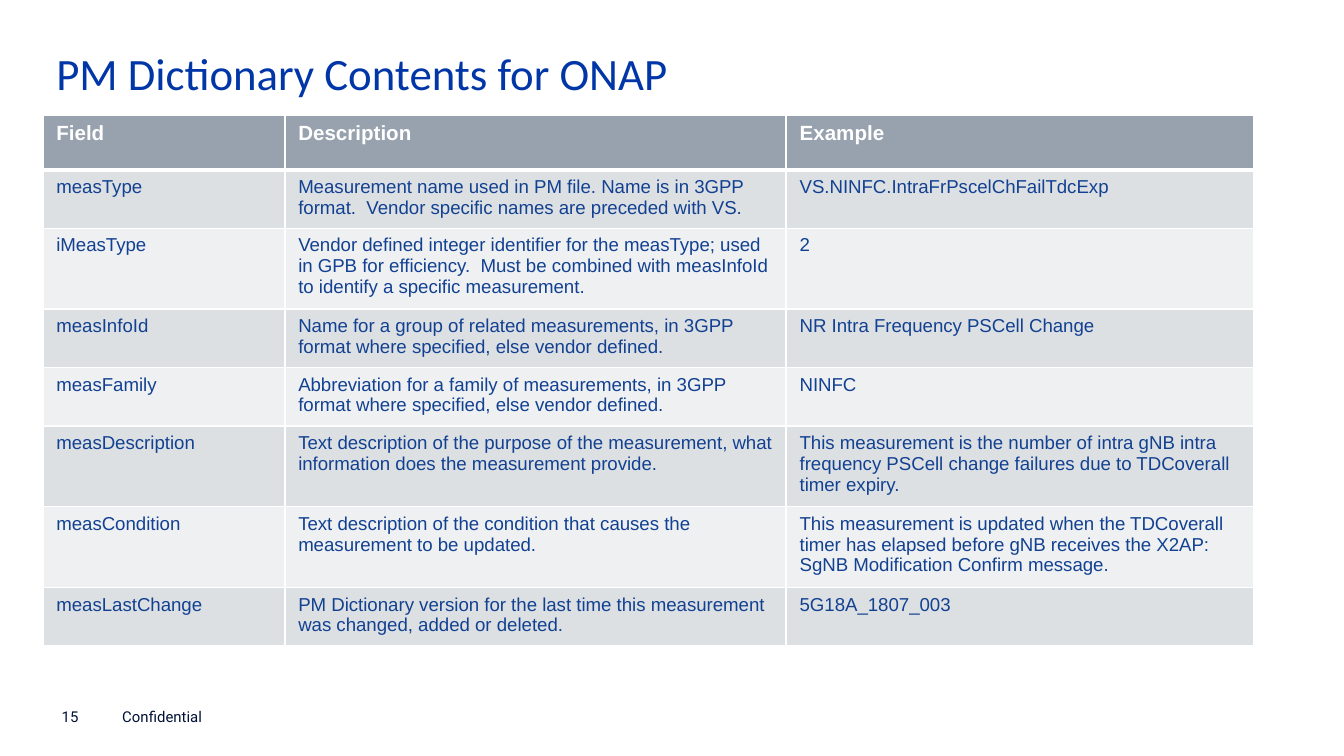
from dataclasses import dataclass

import pptx
import pptx.dml.color
import pptx.enum.text
import pptx.oxml
import pptx.oxml.ns
import pptx.util

Pt = pptx.util.Pt
Anchor = pptx.enum.text.MSO_ANCHOR


@dataclass(frozen=True)
class Font:
    name: str
    size: float
    color: str
    bold: bool = False


@dataclass(frozen=True)
class Theme:
    title: Font = Font("Calibri", 24, "0036A7")
    head: Font = Font("Arial", 11, "FFFFFF", True)
    cell: Font = Font("Arial", 10, "124191")
    foot: Font = Font("Roboto", 8, "001135")
    head_fill: str = "98A2AE"
    bands: tuple = ("DDE0E3", "EFF0F2")
    rule: str = "FFFFFF"


@dataclass(frozen=True)
class Note:
    text: str
    left: float
    width: float


@dataclass(frozen=True)
class Row:
    field: str
    about: str
    sample: str


THEME = Theme()
LEFT, WIDTH = 23, 648.8
COLS = (129.6, 268.6, 250.6)
ROW_HIGH = 29.5

HEAD = Row("Field", "Description", "Example")
ROWS = [
    Row("measType",
        "Measurement name used in PM file. Name is in 3GPP format.  "
        "Vendor specific names are preceded with VS.",
        "VS.NINFC.IntraFrPscelChFailTdcExp"),
    Row("iMeasType",
        "Vendor defined integer identifier for the measType; used in GPB for efficiency.  "
        "Must be combined with measInfoId to identify a specific measurement.",
        "2"),
    Row("measInfoId",
        "Name for a group of related measurements, in 3GPP format where specified, "
        "else vendor defined.",
        "NR Intra Frequency PSCell Change"),
    Row("measFamily",
        "Abbreviation for a family of measurements, in 3GPP format where specified, "
        "else vendor defined.",
        "NINFC"),
    Row("measDescription",
        "Text description of the purpose of the measurement, what information does "
        "the measurement provide.",
        "This measurement is the number of intra gNB intra frequency PSCell change "
        "failures due to TDCoverall timer expiry."),
    Row("measCondition",
        "Text description of the condition that causes the measurement to be updated.",
        "This measurement is updated when the TDCoverall timer has elapsed before gNB "
        "receives the X2AP: SgNB Modification Confirm message."),
    Row("measLastChange",
        "PM Dictionary version for the last time this measurement was changed, "
        "added or deleted.",
        "5G18A_1807_003"),
]
NOTES = [Note("15", 33.1, 11.5), Note("Confidential", 65.5, 141.8)]


def rgb(code: str):
    return pptx.dml.color.RGBColor.from_string(code)


def write(frame, text: str, font: Font) -> None:
    frame.text = text
    for para in frame.paragraphs:
        para.alignment = pptx.enum.text.PP_ALIGN.LEFT
        for run in para.runs:
            run.font.name = font.name
            run.font.size = Pt(font.size)
            run.font.bold = font.bold
            run.font.color.rgb = rgb(font.color)


def edge(cell, side: str, width: float) -> None:
    """Add one cell border; call in the order L, R, T, B."""
    space = pptx.oxml.ns.nsdecls("a")
    line = pptx.oxml.parse_xml(
        f'<a:ln{side} {space} w="{Pt(width)}"><a:solidFill>'
        f'<a:srgbClr val="{THEME.rule}"/></a:solidFill></a:ln{side}>')
    cell._tc.get_or_add_tcPr().append(line)


def draw_title(slide, text: str) -> None:
    title = slide.shapes.title
    title.left, title.top = Pt(LEFT), Pt(19.4)
    title.width, title.height = Pt(WIDTH), Pt(32.4)
    frame = title.text_frame
    write(frame, text, THEME.title)
    frame.vertical_anchor = Anchor.TOP
    frame.auto_size = pptx.enum.text.MSO_AUTO_SIZE.NONE
    frame.margin_top = Pt(4.9)
    frame.paragraphs[0].space_after = Pt(3.4)


def draw_table(slide, rows: list[Row]) -> None:
    table = slide.shapes.add_table(
        len(rows), len(COLS), Pt(LEFT), Pt(61.6),
        Pt(WIDTH), Pt(ROW_HIGH * len(rows))).table
    for col, width in zip(table.columns, COLS):
        col.width = Pt(width)
    for i, row in enumerate(rows):
        table.rows[i].height = Pt(ROW_HIGH)
        font = THEME.cell if i else THEME.head
        fill = THEME.bands[(i - 1) % 2] if i else THEME.head_fill
        # A thick rule parts the header from the body
        edges = {"L": 1, "R": 1, "T": 3 if i == 1 else 1, "B": 1 if i else 3}
        for j, text in enumerate((row.field, row.about, row.sample)):
            cell = table.cell(i, j)
            write(cell.text_frame, text, font)
            for side, width in edges.items():
                edge(cell, side, width)
            cell.fill.solid()
            cell.fill.fore_color.rgb = rgb(fill)


def draw_note(slide, note: Note) -> None:
    box = slide.shapes.add_textbox(Pt(note.left), Pt(379.4), Pt(note.width), Pt(9.4))
    frame = box.text_frame
    frame.word_wrap = True
    frame.vertical_anchor = Anchor.BOTTOM
    frame.margin_left = frame.margin_right = Pt(0)
    frame.margin_top = frame.margin_bottom = Pt(0)
    write(frame, note.text, THEME.foot)


def main() -> None:
    deck = pptx.Presentation()
    deck.slide_width, deck.slide_height = Pt(720), Pt(405)
    slide = deck.slides.add_slide(deck.slide_layouts[5])

    # Footer
    for note in NOTES:
        draw_note(slide, note)

    # Title and dictionary table
    draw_title(slide, "PM Dictionary Contents for ONAP")
    draw_table(slide, [HEAD, *ROWS])
    deck.save("out.pptx")


if __name__ == "__main__":
    main()
